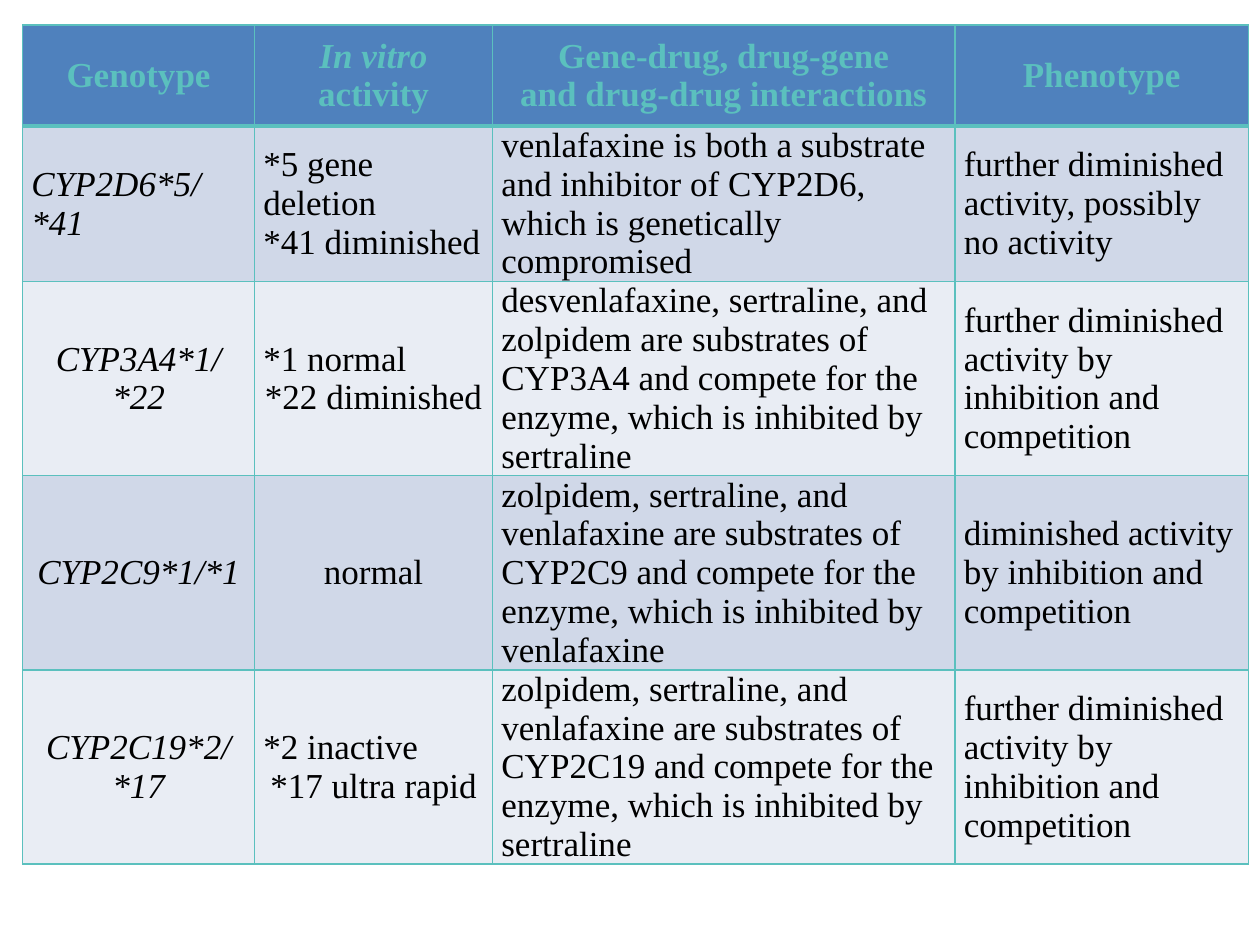
"""Build a slide with a table of genotypes, drug interactions and phenotypes."""
from lxml import etree
from pptx import Presentation
from pptx.dml.color import RGBColor
from pptx.enum.text import MSO_ANCHOR, PP_ALIGN
from pptx.oxml.ns import qn
from pptx.util import Inches, Pt

LEFT, MID = PP_ALIGN.LEFT, PP_ALIGN.CENTER
ANCHOR = MSO_ANCHOR.MIDDLE

THEME = {
    "font": "Times New Roman", "size": 20, "ink": "000000",
    "teal": "5BC0BE", "head": "4F81BD", "bands": ("D0D8E8", "E9EDF4"),
    "thin": 1, "thick": 3,
}

PLAIN, SLOPE = False, True
HEADS = [
    [[("Genotype", PLAIN)]],
    [[("In vitro", SLOPE), (" activity", PLAIN)]],
    [[("Gene-drug, drug-gene", PLAIN)], [("and drug-drug interactions", PLAIN)]],
    [[("Phenotype", PLAIN)]],
]
SHARED = ("{} are substrates of {} and compete for the enzyme, "
          "which is inhibited by {}")
TRIO = "zolpidem, sertraline, and venlafaxine"
FURTHER = "further diminished activity by inhibition and competition"
ROWS = [
    (("CYP2D6*5/*41", LEFT),
     [("*5 gene deletion", LEFT), ("*41 diminished", LEFT)],
     "venlafaxine is both a substrate and inhibitor of CYP2D6, "
     "which is genetically compromised",
     "further diminished activity, possibly no activity"),
    (("CYP3A4*1/*22", MID),
     [("*1 normal", LEFT), ("*22 diminished", MID)],
     SHARED.format("desvenlafaxine, sertraline, and zolpidem", "CYP3A4", "sertraline"),
     FURTHER),
    (("CYP2C9*1/*1", MID),
     [("normal", MID)],
     SHARED.format(TRIO, "CYP2C9", "venlafaxine"),
     "diminished activity by inhibition and competition"),
    (("CYP2C19*2/*17", MID),
     [("*2 inactive", LEFT), ("*17 ultra rapid", MID)],
     SHARED.format(TRIO, "CYP2C19", "sertraline"),
     FURTHER),
]

WIDTHS = [1.84, 1.89, 3.67, 2.33]
HEIGHTS = [0.8, 1.14, 1.53, 1.53, 1.53]
LEFT_EDGE, TOP_EDGE = 0.18, 0.2
CELL = {
    "vertical_anchor": ANCHOR,
    "margin_left": Inches(0.07), "margin_right": Inches(0.07),
    "margin_top": 0, "margin_bottom": 0,
}


def apply(item, values):
    for name, value in values.items():
        setattr(item, name, value)


def border(cell, widths):
    props = cell._tc.get_or_add_tcPr()
    for spot, (side, width) in enumerate(widths.items()):
        line = etree.Element(qn(f"a:ln{side}"), w=str(Pt(width)))
        fill = etree.SubElement(line, qn("a:solidFill"))
        etree.SubElement(fill, qn("a:srgbClr"), val=THEME["teal"])
        props.insert(spot, line)


def write(cell, paras, color, bold):
    frame = cell.text_frame
    for num, (runs, align) in enumerate(paras):
        para = frame.add_paragraph() if num else frame.paragraphs[0]
        para.alignment = align
        for text, slope in runs:
            run = para.add_run()
            run.text = text
            apply(run.font, {"name": THEME["font"], "size": Pt(THEME["size"]),
                             "bold": bold, "italic": slope})
            run.font.color.rgb = RGBColor.from_string(color)


def body(row):
    (gene, align), acts, drugs, result = row
    return [
        [([(gene, SLOPE)], align)],
        [([(text, PLAIN)], side) for text, side in acts],
        [([(drugs, PLAIN)], LEFT)],
        [([(result, PLAIN)], LEFT)],
    ]


def main():
    deck = Presentation()
    apply(deck, {"slide_width": Inches(10), "slide_height": Inches(7.5)})
    slide = deck.slides.add_slide(deck.slide_layouts[6])
    grid = [[[(runs, MID) for runs in head] for head in HEADS]]
    grid += [body(row) for row in ROWS]
    table = slide.shapes.add_table(
        len(grid), len(WIDTHS), Inches(LEFT_EDGE), Inches(TOP_EDGE),
        Inches(sum(WIDTHS)), Inches(sum(HEIGHTS))).table
    for col, width in zip(table.columns, WIDTHS):
        col.width = Inches(width)
    for row, height in zip(table.rows, HEIGHTS):
        row.height = Inches(height)

    thin, thick = THEME["thin"], THEME["thick"]
    for r, line in enumerate(grid):
        top = r == 0
        fill = THEME["head"] if top else THEME["bands"][(r - 1) % 2]
        color = THEME["teal"] if top else THEME["ink"]
        edges = {"L": thin, "R": thin, "T": thick if r == 1 else thin,
                 "B": thick if top else thin}
        for c, paras in enumerate(line):
            cell = table.cell(r, c)
            apply(cell, CELL)
            cell.fill.solid()
            cell.fill.fore_color.rgb = RGBColor.from_string(fill)
            border(cell, edges)
            write(cell, paras, color, top)
    deck.save("out.pptx")


if __name__ == "__main__":
    main()
